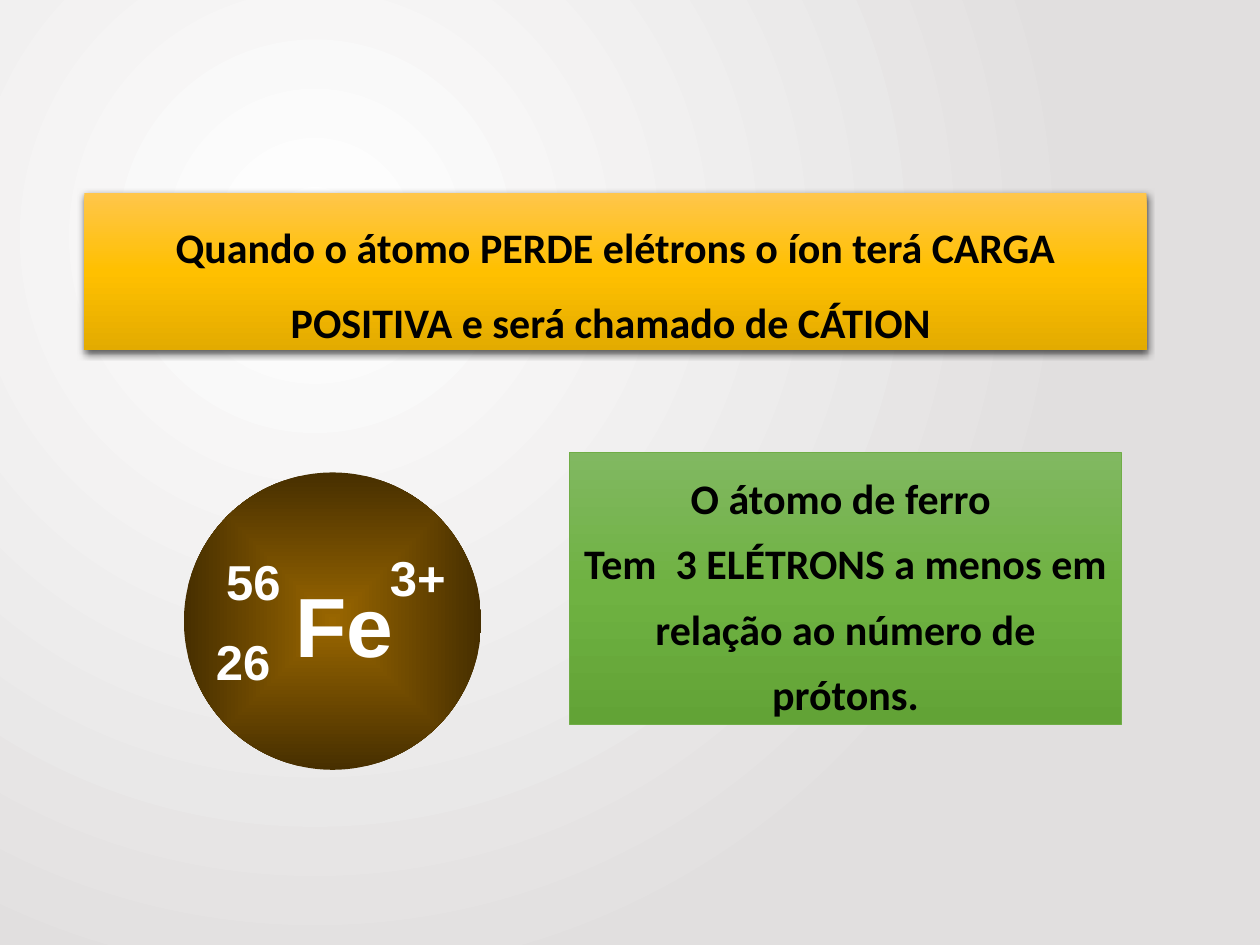
from dataclasses import dataclass
from typing import Optional

import lxml.etree
import pptx
import pptx.dml.color
import pptx.enum.shapes
import pptx.enum.text
import pptx.oxml.ns
import pptx.util

Inches = pptx.util.Inches
Pt = pptx.util.Pt
Shapes = pptx.enum.shapes.MSO_SHAPE
qn = pptx.oxml.ns.qn


@dataclass
class Gradient:
    """Colour stops, and either a straight angle or a path with its focus."""
    stops: list[tuple[int, str]]
    angle: Optional[int] = None
    path_kind: str = "circle"
    focus: tuple[int, int, int, int] = (50, 50, 50, 50)


@dataclass
class Panel:
    place: tuple[float, float, float, float]
    gradient: Gradient
    lines: list[str]
    spacing: float = 1.0
    kind: int = Shapes.RECTANGLE
    outline: Optional[str] = None
    shadow: bool = False


@dataclass
class Label:
    place: tuple[float, float, float, float]
    wording: str
    size: int


def colour(value: str) -> pptx.dml.color.RGBColor:
    return pptx.dml.color.RGBColor.from_string(value)


def add_child(parent, tag: str, **attributes):
    return lxml.etree.SubElement(
        parent, qn(tag), {key: str(value) for key, value in attributes.items()})


def apply_gradient(fill, owner, gradient: Gradient) -> None:
    """Fill the owner element with the gradient's own stops and direction."""
    fill.gradient()
    element = next(owner.iter(qn("a:gradFill")))
    for child in list(element):
        element.remove(child)
    stop_list = add_child(element, "a:gsLst")
    for position, value in gradient.stops:
        stop = add_child(stop_list, "a:gs", pos=position * 1000)
        add_child(stop, "a:srgbClr", val=value)
    if gradient.angle is not None:
        add_child(element, "a:lin", ang=gradient.angle * 60000, scaled=0)
        return
    route = add_child(element, "a:path", path=gradient.path_kind)
    sides = {side: share * 1000 for side, share in zip("ltrb", gradient.focus)}
    add_child(route, "a:fillToRect", **sides)


def add_shadow(shape) -> None:
    effects = shape.element.spPr.find(qn("a:effectLst"))
    shadow = add_child(effects, "a:outerShdw", blurRad=Pt(4.5), dist=Pt(1.5),
                       dir=90 * 60000, algn="ctr", rotWithShape=0)
    tint = add_child(shadow, "a:srgbClr", val="000000")
    add_child(tint, "a:alpha", val=63000)


def write_lines(box, lines: list[str], spacing: float, font: dict,
                frame_format: dict) -> None:
    frame = box.text_frame
    frame.auto_size = pptx.enum.text.MSO_AUTO_SIZE.SHAPE_TO_FIT_TEXT
    for name, value in frame_format.items():
        setattr(frame, name, value)
    for index, line in enumerate(lines):
        para = frame.add_paragraph() if index else frame.paragraphs[0]
        para.alignment = pptx.enum.text.PP_ALIGN.CENTER
        para.line_spacing = spacing
        span = para.add_run()
        span.text = line
        for name, value in font.items():
            setattr(span.font, name, value)
        span.font.color.rgb = colour("000000" if font["name"] == "Calibri" else "FFFFFF")


def draw_panel(page, panel: Panel) -> None:
    shape = page.shapes.add_shape(panel.kind, *map(Inches, panel.place))
    shape.shadow.inherit = False
    apply_gradient(shape.fill, shape.element.spPr, panel.gradient)
    if panel.outline:
        shape.line.color.rgb = colour(panel.outline)
        shape.line.width = Pt(0.5)
    else:
        shape.line.fill.background()
    if panel.shadow:
        add_shadow(shape)
    if panel.lines:
        write_lines(shape, panel.lines, panel.spacing,
                    {"name": "Calibri", "size": Pt(24), "bold": True},
                    {"word_wrap": True,
                     "vertical_anchor": pptx.enum.text.MSO_ANCHOR.MIDDLE})


def draw_label(page, label: Label) -> None:
    box = page.shapes.add_textbox(*map(Inches, label.place))
    write_lines(box, [label.wording], 1.0,
                {"name": "Arial", "size": Pt(label.size), "bold": True},
                {"word_wrap": False})


BACKDROP = Gradient([(0, "FFFFFF"), (100, "E1DFDF")], focus=(50, 50, 100, 100))

PANELS = [
    Panel((0.67, 1.53, 8.43, 1.25),
          Gradient([(0, "FFC64B"), (50, "FFC000"), (100, "E3AB00")], angle=90),
          ["Quando o átomo PERDE elétrons o íon terá CARGA POSITIVA "
           "e será chamado de CÁTION "],
          spacing=1.5, shadow=True),
    Panel((4.52, 3.59, 4.38, 2.16),
          Gradient([(0, "81B861"), (50, "6FB242"), (100, "62A336")], angle=90),
          ["O átomo de ferro ",
           "Tem  3 ELÉTRONS a menos em relação ao número de prótons."],
          spacing=1.3, outline="70AD47"),
    Panel((1.46, 3.75, 2.36, 2.36),
          Gradient([(0, "996600"), (100, "472F00")], path_kind="shape"),
          [], kind=Shapes.OVAL),
]

ION_LABELS = [
    Label((2.24, 4.5, 0.99, 0.91), "Fe", 48),
    Label((1.69, 4.33, 0.64, 0.57), "56", 28),
    Label((1.61, 4.96, 0.64, 0.57), "26", 28),
    Label((2.99, 4.3, 0.65, 0.57), "3+", 28),
]


def main() -> None:
    deck = pptx.Presentation()
    deck.slide_width, deck.slide_height = Inches(10), Inches(7.5)
    page = deck.slides.add_slide(deck.slide_layouts[6])
    apply_gradient(page.background.fill, page.element, BACKDROP)
    for panel in PANELS:
        draw_panel(page, panel)
    for label in ION_LABELS:
        draw_label(page, label)
    deck.save("out.pptx")


if __name__ == "__main__":
    main()
